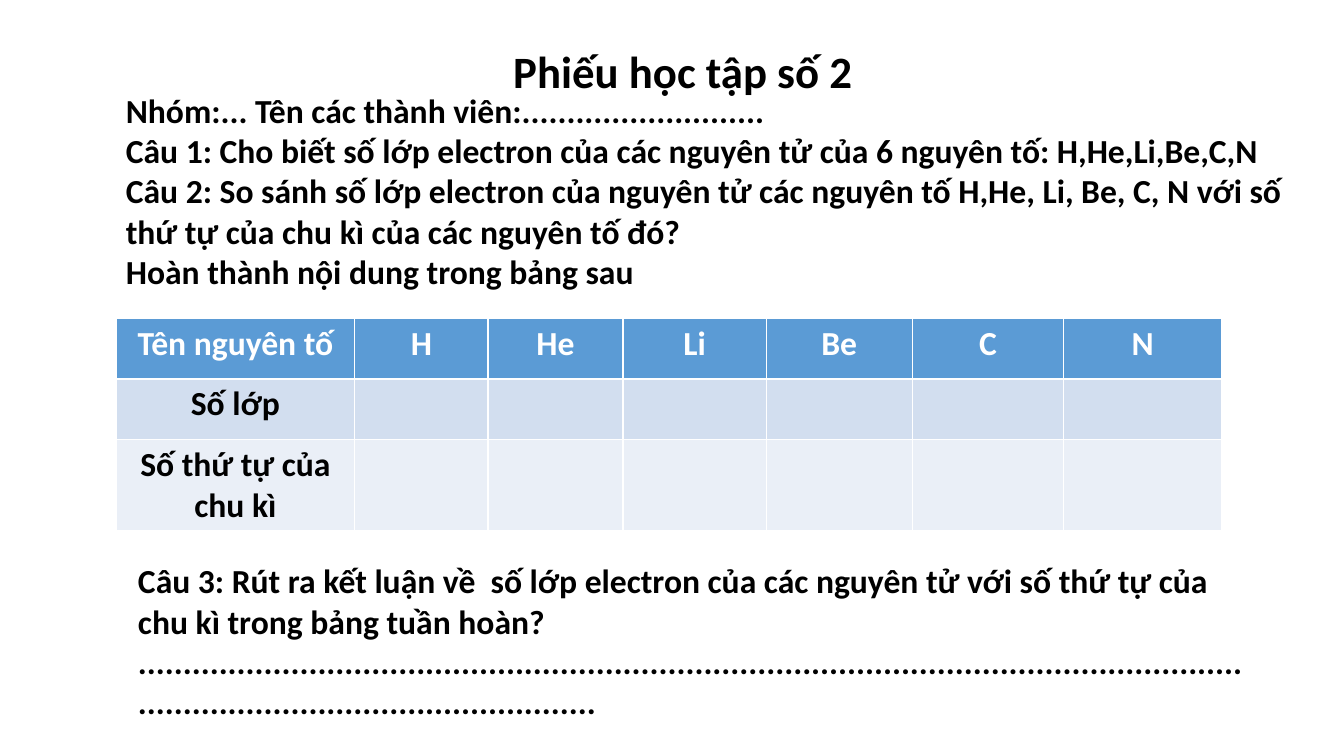
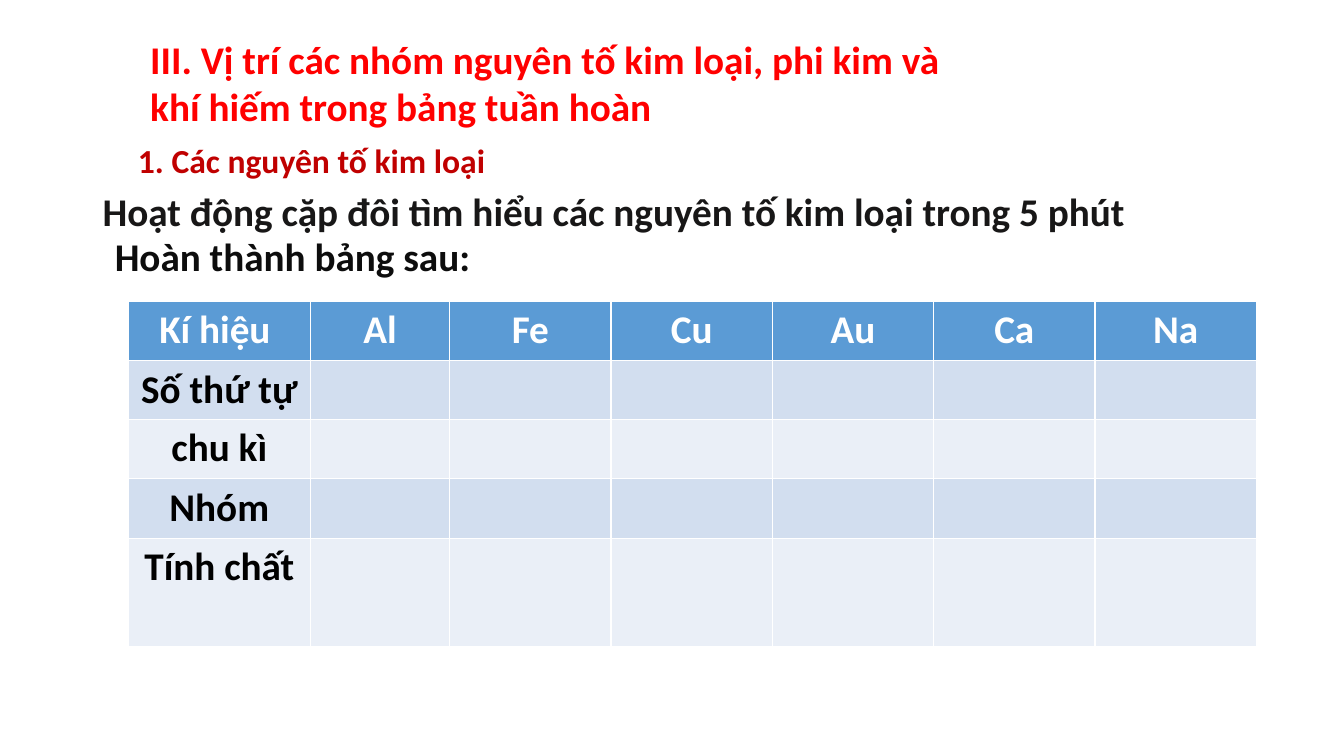
import pptx
import pptx.dml.color
import pptx.enum.text
import pptx.util

Inches = pptx.util.Inches
PP_ALIGN = pptx.enum.text.PP_ALIGN
BLACK, WHITE, RED, DARK_RED = "000000", "FFFFFF", "FF0000", "C00000"
HEADER, BANDS = "5B9BD5", ("D2DEEF", "EAEFF7")


def rgb(value):
    return pptx.dml.color.RGBColor.from_string(value)


class Deck:
    """Holds the worksheet style and the slide being filled."""

    font = "Calibri"
    frame_format = {
        "word_wrap": True,
        "auto_size": pptx.enum.text.MSO_AUTO_SIZE.SHAPE_TO_FIT_TEXT,
        "vertical_anchor": pptx.enum.text.MSO_ANCHOR.TOP,
    }

    def __init__(self):
        self.prs = pptx.Presentation()
        self.prs.slide_width = Inches(13.33)
        self.prs.slide_height = Inches(7.5)
        self.s = None

    def add_paragraphs(self, tf, paragraphs, size, color, align=PP_ALIGN.LEFT):
        for i, text in enumerate(paragraphs):
            p = tf.add_paragraph() if i else tf.paragraphs[0]
            p.alignment = align
            r = p.add_run()
            r.text = text
            font_format = {"name": self.font, "size": pptx.util.Pt(size), "bold": True}
            for name, value in font_format.items():
                setattr(r.font, name, value)
            r.font.color.rgb = rgb(color)

    def fill_frame(self, sp, paragraphs, size, color):
        for name, value in self.frame_format.items():
            setattr(sp.text_frame, name, value)
        self.add_paragraphs(sp.text_frame, paragraphs, size, color)

    def add_slide(self, title, box, size, color):
        self.s = self.prs.slides.add_slide(self.prs.slide_layouts[5])
        sp = self.s.shapes.title
        for name, value in zip(("left", "top", "width", "height"), box):
            setattr(sp, name, Inches(value))
        self.fill_frame(sp, [title], size, color)

    def add_text(self, paragraphs, box, size, color=BLACK):
        sp = self.s.shapes.add_textbox(*map(Inches, box))
        self.fill_frame(sp, paragraphs, size, color)

    def add_table(self, header, labels, left, top, widths, heights, size):
        """Adds a table with a header row, labelled rows and cells left to fill in."""
        table = self.s.shapes.add_table(
            len(heights), len(widths), Inches(left), Inches(top),
            Inches(sum(widths)), Inches(sum(heights))).table
        for column, width in zip(table.columns, widths):
            column.width = Inches(width)
        for row, height in zip(table.rows, heights):
            row.height = Inches(height)
        rows = [header] + [[label] for label in labels]
        for i, row in enumerate(table.rows):
            for cell in row.cells:
                cell.fill.solid()
                cell.fill.fore_color.rgb = rgb(BANDS[(i - 1) % 2] if i else HEADER)
            for cell, text in zip(row.cells, rows[i]):
                self.add_paragraphs(cell.text_frame, [text], size,
                                    BLACK if i else WHITE, PP_ALIGN.CENTER)


def add_worksheet(deck):
    deck.add_slide("Phiếu học tập số 2", (4.99, 0.38, 4.39, 0.64), 32, BLACK)
    deck.add_text([
        "Nhóm:... Tên các thành viên:" + "." * 27,
        "Câu 1: Cho biết số lớp electron của các nguyên tử của 6 nguyên tố: H,He,Li,Be,C,N",
        "Câu 2: So sánh số lớp electron của nguyên tử các nguyên tố H,He, Li, Be, C, N "
        "với số thứ tự của chu kì của các nguyên tố đó?",
        "Hoàn thành nội dung trong bảng sau",
    ], (1.15, 0.84, 11.97, 2.12), 24)
    deck.add_table(
        ["Tên nguyên tố", "H", "He", "Li", "Be", "C", "N"],
        ["Số lớp", "Số thứ tự của chu kì"],
        1.15, 3.16, [2.37, 1.32, 1.34, 1.42, 1.45, 1.5, 1.57], [0.6, 0.6, 0.9], 24)
    deck.add_text([
        "Câu 3: Rút ra kết luận về  số lớp electron của các nguyên tử với số thứ tự "
        "của chu kì trong bảng tuần hoàn?",
        "." * 174,
    ], (1.27, 5.51, 11.22, 1.72), 24)


def add_metals(deck):
    deck.add_slide(
        "III. Vị trí các nhóm nguyên tố kim loại, phi kim và khí hiếm trong bảng tuần hoàn",
        (1.39, 0.3, 8.24, 1.04), 28, RED)
    deck.add_text(["1. Các nguyên tố kim loại"], (1.27, 1.34, 4.04, 0.5), 24, DARK_RED)
    deck.add_text(["Hoạt động cặp đôi tìm hiểu các nguyên tố kim loại trong 5 phút"],
                  (0.92, 1.81, 10.97, 0.57), 28, "181717")
    deck.add_text(["Hoàn thành bảng sau:"], (1.04, 2.26, 4.03, 0.57), 28, "0D0D0D")
    deck.add_table(
        ["Kí hiệu ", "Al", "Fe", "Cu", "Au", "Ca", "Na"],
        ["Số thứ tự", "chu kì", "Nhóm", "Tính chất"],
        1.27, 2.99, [1.81, 1.38] + [1.6] * 5, [0.59, 0.58, 0.59, 0.59, 1.08], 28)


def main():
    deck = Deck()
    add_worksheet(deck)
    add_metals(deck)
    deck.prs.save("out.pptx")


if __name__ == "__main__":
    main()
